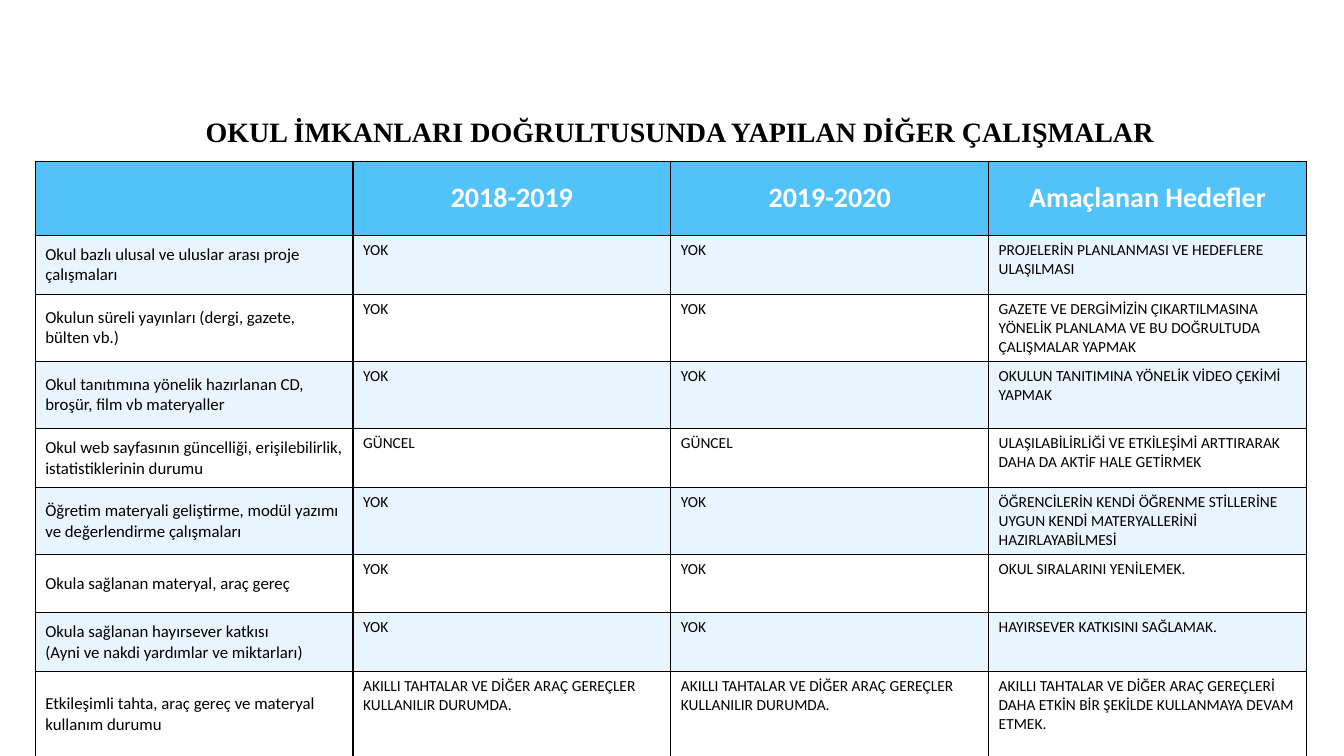
from dataclasses import dataclass

from lxml import etree
from pptx import Presentation
from pptx.dml.color import RGBColor
from pptx.enum.text import MSO_ANCHOR, MSO_AUTO_SIZE, PP_ALIGN
from pptx.oxml.ns import qn
from pptx.slide import Slide
from pptx.table import _Cell
from pptx.text.text import TextFrame
from pptx.util import Pt

TOP, MIDDLE = MSO_ANCHOR.TOP, MSO_ANCHOR.MIDDLE
LEFT, CENTER = PP_ALIGN.LEFT, PP_ALIGN.CENTER
NO_FIT = MSO_AUTO_SIZE.NONE


@dataclass(frozen=True)
class Theme:
    ink: str = "000000"
    white: str = "FFFFFF"
    header: str = "51C3F9"
    band: str = "E9F5FE"
    title_font: str = "Times New Roman"
    body_font: str = "Calibri"
    heading_size: float = 20
    topic_size: float = 12
    status_size: float = 11
    border: float = 1


@dataclass(frozen=True)
class Activity:
    topic: str
    previous: str
    current: str
    goal: str
    height: float = 42.2


THEME = Theme()
TITLE = "OKUL İMKANLARI DOĞRULTUSUNDA YAPILAN DİĞER ÇALIŞMALAR"
HEADINGS = ("", "2018-2019", "2019-2020", "Amaçlanan Hedefler")
HEADER_HEIGHT = 52.8
COLUMN_WIDTH = 227
NONE = "YOK"
UPDATED = "GÜNCEL"
USABLE = "AKILLI TAHTALAR VE DİĞER ARAÇ GEREÇLER KULLANILIR DURUMDA."
ACTIVITIES = (
    Activity("Okul bazlı ulusal ve uluslar arası proje çalışmaları", NONE, NONE,
             "PROJELERİN PLANLANMASI VE HEDEFLERE ULAŞILMASI"),
    Activity("Okulun süreli yayınları (dergi, gazete, bülten vb.)", NONE, NONE,
             "GAZETE VE DERGİMİZİN ÇIKARTILMASINA YÖNELİK PLANLAMA VE "
             "BU DOĞRULTUDA ÇALIŞMALAR YAPMAK"),
    Activity("Okul tanıtımına yönelik hazırlanan CD, broşür, film vb materyaller", NONE, NONE,
             "OKULUN TANITIMINA YÖNELİK VİDEO ÇEKİMİ YAPMAK", 48),
    Activity("Okul web sayfasının güncelliği, erişilebilirlik, istatistiklerinin durumu",
             UPDATED, UPDATED,
             "ULAŞILABİLİRLİĞİ VE ETKİLEŞİMİ ARTTIRARAK DAHA DA AKTİF HALE GETİRMEK"),
    Activity("Öğretim materyali geliştirme, modül yazımı ve değerlendirme çalışmaları", NONE, NONE,
             "ÖĞRENCİLERİN KENDİ ÖĞRENME STİLLERİNE UYGUN KENDİ MATERYALLERİNİ HAZIRLAYABİLMESİ"),
    Activity("Okula sağlanan materyal, araç gereç", NONE, NONE,
             "OKUL SIRALARINI YENİLEMEK.", 41.4),
    Activity("Okula sağlanan hayırsever katkısı\n(Ayni ve nakdi yardımlar ve miktarları)",
             NONE, NONE, "HAYIRSEVER KATKISINI SAĞLAMAK."),
    Activity("Etkileşimli tahta, araç gereç ve materyal kullanım durumu", USABLE, USABLE,
             "AKILLI TAHTALAR VE DİĞER ARAÇ GEREÇLERİ DAHA ETKİN BİR ŞEKİLDE "
             "KULLANMAYA DEVAM ETMEK.", 61),
)


def write_text(frame: TextFrame, text: str, *, size: float, font: str = THEME.body_font,
               color: str = THEME.ink, bold: bool = False, align: PP_ALIGN = LEFT,
               spacing: float = 1.0) -> None:
    frame.text = text
    for para in frame.paragraphs:
        para.alignment = align
        para.line_spacing = spacing
        for span in para.runs:
            span.font.name = font
            span.font.size = Pt(size)
            span.font.bold = bold
            span.font.color.rgb = RGBColor.from_string(color)


def style_cell(cell: _Cell, fill: str, anchor: MSO_ANCHOR) -> None:
    cell.vertical_anchor = anchor
    cell.margin_left = cell.margin_right = Pt(7.2)
    cell.margin_top = cell.margin_bottom = Pt(3.6)
    properties = cell._tc.get_or_add_tcPr()
    for side in ("lnL", "lnR", "lnT", "lnB"):
        line = etree.SubElement(properties, qn(f"a:{side}"), w=str(Pt(THEME.border)))
        paint = etree.SubElement(line, qn("a:solidFill"))
        etree.SubElement(paint, qn("a:srgbClr"), val=THEME.ink)
    cell.fill.solid()
    cell.fill.fore_color.rgb = RGBColor.from_string(fill)


def add_title(page: Slide) -> None:
    box = page.shapes.title
    box.left, box.top, box.width, box.height = Pt(115.2), Pt(80.6), Pt(740.9), Pt(43.9)
    frame = box.text_frame
    frame.word_wrap = True
    frame.auto_size = NO_FIT
    frame.vertical_anchor = TOP
    write_text(frame, TITLE, size=THEME.heading_size, font=THEME.title_font,
               bold=True, align=CENTER, spacing=0.9)


def add_activity_table(page: Slide) -> None:
    heights = [HEADER_HEIGHT, *(activity.height for activity in ACTIVITIES)]
    table = page.shapes.add_table(
        len(heights), len(HEADINGS), Pt(25.2), Pt(115.2),
        Pt(COLUMN_WIDTH * len(HEADINGS)), Pt(sum(heights))).table
    table.first_row = table.horz_banding = False
    for column in table.columns:
        column.width = Pt(COLUMN_WIDTH)
    for row, height in zip(table.rows, heights):
        row.height = Pt(height)

    for column, heading in enumerate(HEADINGS):
        cell = table.cell(0, column)
        style_cell(cell, THEME.header, MIDDLE)
        write_text(cell.text_frame, heading, size=THEME.heading_size,
                   color=THEME.white, bold=True, align=CENTER)

    for row, activity in enumerate(ACTIVITIES, start=1):
        fill = THEME.band if row % 2 else THEME.white
        texts = (activity.topic, activity.previous, activity.current, activity.goal)
        for column, text in enumerate(texts):
            cell = table.cell(row, column)
            style_cell(cell, fill, TOP if column else MIDDLE)
            write_text(cell.text_frame, text,
                       size=THEME.status_size if column else THEME.topic_size)


def main() -> None:
    deck = Presentation()
    deck.slide_width, deck.slide_height = Pt(960), Pt(540)
    page = deck.slides.add_slide(deck.slide_layouts.get_by_name("Title Only"))
    add_title(page)
    add_activity_table(page)
    deck.save("out.pptx")


if __name__ == "__main__":
    main()
